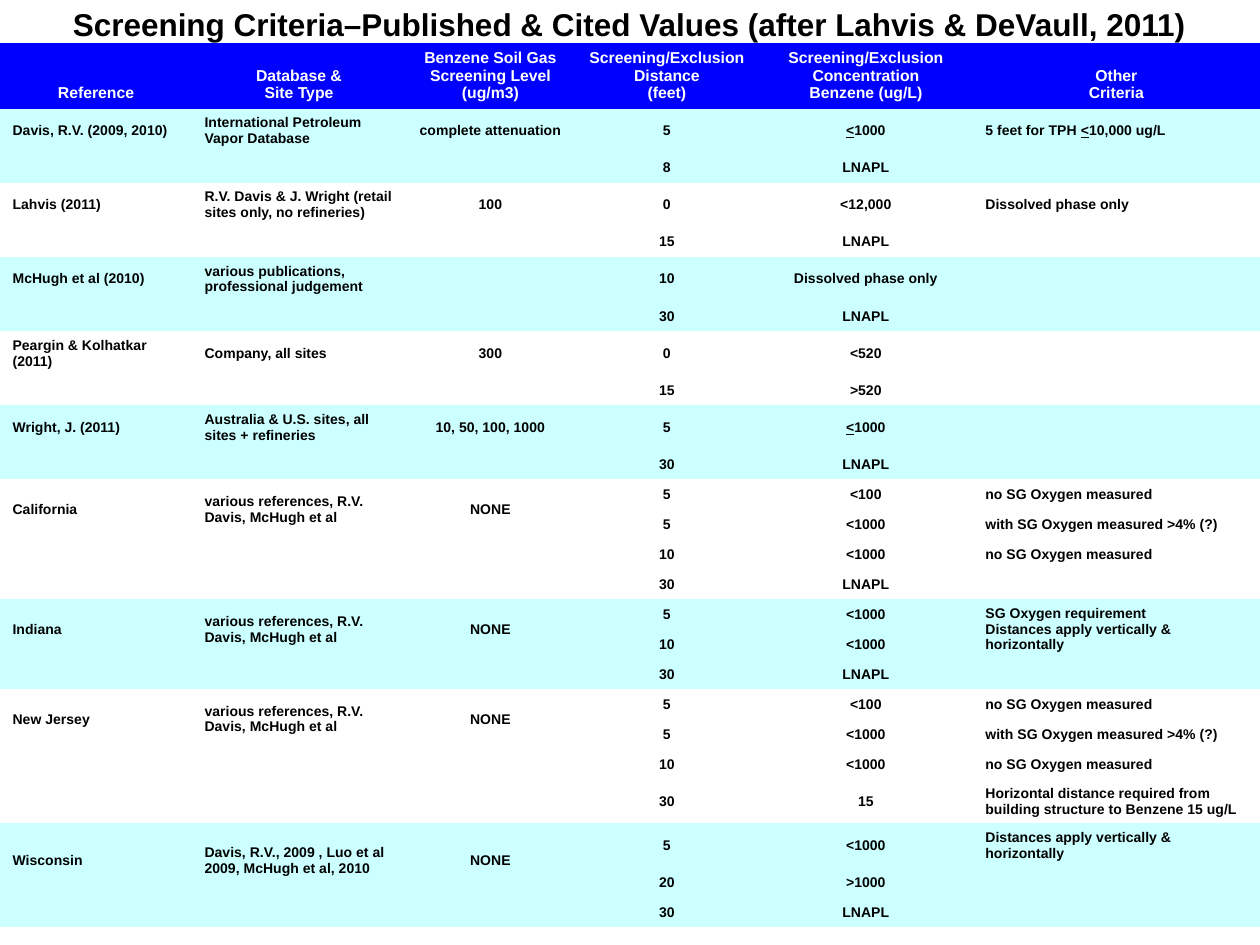
from copy import deepcopy

from lxml.etree import SubElement
from pptx import Presentation
from pptx.dml.color import RGBColor
from pptx.enum.text import MSO_ANCHOR, PP_ALIGN
from pptx.oxml.ns import qn
from pptx.util import Pt

PX = 914400 // 126
COLORS = {"header": "0000FF", "band": "CCFFFF", "plain": "FFFFFF",
          "header_text": "FFFFFF", "text": "000000"}
NO_GRID_STYLE = "{2D5ABB26-0587-4C30-8999-92F81FD0307C}"

TITLE = "Screening Criteria–Published & Cited Values (after Lahvis & DeVaull, 2011)"
# A vertical tab breaks a line, a newline starts a paragraph, bars enclose underlined text.
HEADINGS = ["Reference", "Database &\vSite Type",
            "Benzene Soil Gas\vScreening Level (ug/m3)",
            "Screening/Exclusion Distance\v(feet)",
            "Screening/Exclusion Concentration\vBenzene (ug/L)",
            "Other\vCriteria"]
VARIOUS = "various references, R.V. Davis, McHugh et al"
NO_OXYGEN = "no SG Oxygen measured"
WITH_OXYGEN = "with SG Oxygen measured >4% (?)"
DIRECTIONS = "Distances apply vertically & horizontally"

# Reference, database, soil gas level, rows of (distance, concentration, other criteria)
STUDIES = [
    ("Davis, R.V. (2009, 2010)", "International Petroleum Vapor Database",
     "complete attenuation",
     [("5", "|<|1000", "5 feet for TPH |<|10,000 ug/L"), ("8", "LNAPL", "")]),
    ("Lahvis (2011)", "R.V. Davis & J. Wright (retail sites only, no refineries)", "100",
     [("0", "<12,000", "Dissolved phase only"), ("15", "LNAPL", "")]),
    ("McHugh et al (2010)", "various publications, professional judgement", "",
     [("10", "Dissolved phase only", ""), ("30", "LNAPL", "")]),
    ("Peargin & Kolhatkar (2011)", "Company, all sites", "300",
     [("0", "<520", ""), ("15", ">520", "")]),
    ("Wright, J. (2011)", "Australia & U.S. sites, all sites + refineries",
     "10, 50, 100, 1000",
     [("5", "|<|1000", ""), ("30", "LNAPL", "")]),
]
STATES = [
    ("California", VARIOUS, "NONE",
     [("5", "<100", NO_OXYGEN), ("5", "<1000", WITH_OXYGEN),
      ("10", "<1000", NO_OXYGEN), ("30", "LNAPL", "")]),
    ("Indiana", VARIOUS, "NONE",
     [("5", "<1000", "SG Oxygen requirement\n" + DIRECTIONS),
      ("10", "<1000", ""), ("30", "LNAPL", "")]),
    ("New Jersey", VARIOUS, "NONE",
     [("5", "<100", NO_OXYGEN), ("5", "<1000", WITH_OXYGEN), ("10", "<1000", NO_OXYGEN),
      ("30", "15", "Horizontal distance required from building structure to Benzene 15 ug/L")]),
    ("Wisconsin", "Davis, R.V., 2009 , Luo et al 2009, McHugh et al, 2010", "NONE",
     [("5", "<1000", DIRECTIONS), ("20", ">1000", ""), ("30", "LNAPL", "")]),
]
COLUMN_WIDTHS = [192, 214, 169, 184, 214, 287]
CENTERED_COLUMNS = {2, 3, 4}
HEADER_HEIGHT, ROW_HEIGHT, TALL_HEIGHT = 63, 30, 35
TALL_ROWS = {1, 3, 5, 9, 21, 22}


def rgb(name):
    return RGBColor.from_string(COLORS[name])


def add_run(paragraph, words, size, color, underline=False):
    run = paragraph.add_run()
    run.text = words
    style = {"name": "Arial", "size": Pt(size), "bold": True}
    if underline:
        style["underline"] = True
    for key, value in style.items():
        setattr(run.font, key, value)
    run.font.color.rgb = rgb(color)
    return run


def write(frame, text, size, color, align):
    """Fill a text frame, reading the break and underline marks."""
    for number, content in enumerate(text.split("\n")):
        paragraph = frame.add_paragraph() if number else frame.paragraphs[0]
        paragraph.alignment = align
        for line_number, line in enumerate(content.split("\v")):
            if line_number:
                paragraph.add_line_break()
            for part, words in enumerate(line.split("|")):
                if words:
                    add_run(paragraph, words, size, color, part % 2 == 1)
        element = paragraph._p
        for line_break in element.findall(qn("a:br")):
            line_break.append(deepcopy(paragraph.runs[0].font._element))
        SubElement(element, qn("a:endParaRPr"), sz=str(size * 100), b="1")


def fill_cell(cell, text, fill, size, color, align, anchor):
    cell.fill.solid()
    cell.fill.fore_color.rgb = rgb(fill)
    cell.vertical_anchor = anchor
    write(cell.text_frame, text, size, color, align)


def add_title(slide):
    title = slide.shapes.title
    for side, length in {"left": -32, "top": 5, "width": 1323, "height": 58}.items():
        setattr(title, side, length * PX)
    frame = title.text_frame
    for side in ("left", "top", "right", "bottom"):
        setattr(frame, f"margin_{side}", 0)
    frame.word_wrap = True
    frame.vertical_anchor = MSO_ANCHOR.TOP
    write(frame, TITLE, 18, "text", PP_ALIGN.CENTER)


def add_criteria_table(slide):
    groups = STUDIES + STATES
    row_count = 1 + sum(len(group[3]) for group in groups)
    graphic = slide.shapes.add_table(row_count, len(HEADINGS), 0, 43 * PX, 1260 * PX, 906 * PX)
    table = graphic.table
    table.first_row = table.horz_banding = False
    next(graphic._element.iter(qn("a:tableStyleId"))).text = NO_GRID_STYLE

    for column, width in zip(table.columns, COLUMN_WIDTHS):
        column.width = width * PX
    for number, row in enumerate(table.rows):
        height = TALL_HEIGHT if number in TALL_ROWS else ROW_HEIGHT
        row.height = (height if number else HEADER_HEIGHT) * PX
    graphic.height = 906 * PX

    for column, heading in enumerate(HEADINGS):
        fill_cell(table.cell(0, column), heading, "header", 9, "header_text",
                  PP_ALIGN.CENTER, MSO_ANCHOR.BOTTOM)

    top = 1
    for number, (reference, database, level, criteria) in enumerate(groups):
        fill = "plain" if number % 2 else "band"
        for offset, values in enumerate(criteria):
            lead = ("", "", "") if offset else (reference, database, level)
            for column, text in enumerate(lead + values):
                align = PP_ALIGN.CENTER if column in CENTERED_COLUMNS else PP_ALIGN.LEFT
                fill_cell(table.cell(top + offset, column), text, fill, 8, "text",
                          align, MSO_ANCHOR.MIDDLE)
        if number >= len(STUDIES):
            merged = [0, 1, 2] + ([5] if reference == "Indiana" else [])
            for column in merged:
                table.cell(top, column).merge(table.cell(top + 1, column))
        top += len(criteria)


def main():
    deck = Presentation()
    deck.slide_width, deck.slide_height = 1260 * PX, 945 * PX
    slide = deck.slides.add_slide(deck.slide_layouts[5])
    add_title(slide)
    add_criteria_table(slide)
    deck.save("out.pptx")


if __name__ == "__main__":
    main()
